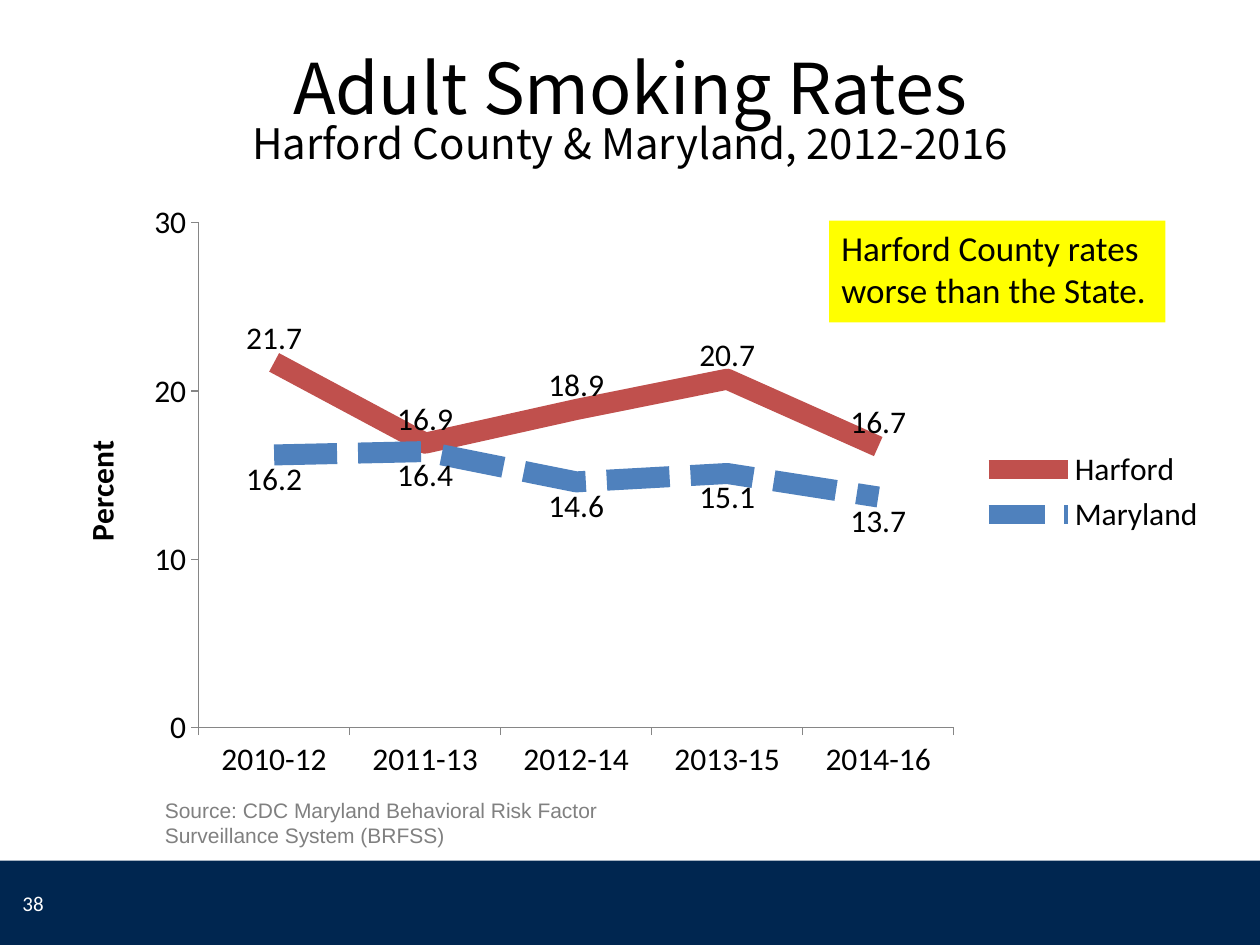
from lxml import etree
from pptx import Presentation
from pptx.chart.data import CategoryChartData
from pptx.dml.color import RGBColor
from pptx.enum.chart import XL_CHART_TYPE, XL_LABEL_POSITION, XL_LEGEND_POSITION, XL_MARKER_STYLE, XL_TICK_MARK
from pptx.enum.dml import MSO_LINE
from pptx.enum.shapes import MSO_SHAPE
from pptx.enum.text import MSO_ANCHOR, PP_ALIGN
from pptx.oxml.ns import qn
from pptx.util import Inches, Pt

LINE_CHART = XL_CHART_TYPE.LINE
ABOVE, BELOW = XL_LABEL_POSITION.ABOVE, XL_LABEL_POSITION.BELOW
SOLID, DASHED = MSO_LINE.SOLID, MSO_LINE.SQUARE_DOT
MIDDLE, TOP = MSO_ANCHOR.MIDDLE, MSO_ANCHOR.TOP


def color(value):
    return RGBColor.from_string(value)


def add_text(text, box, size, font, text_color, anchor=TOP):
    area = slide.shapes.add_textbox(*map(Inches, box))
    frame = area.text_frame
    frame.word_wrap = True
    frame.vertical_anchor = anchor
    paragraph = frame.paragraphs[0]
    paragraph.text = text
    paragraph.font.size = Pt(size)
    paragraph.font.name = font
    paragraph.font.color.rgb = color(text_color)
    return area


prs = Presentation()
prs.slide_width, prs.slide_height = Inches(10), Inches(7.5)
slide = prs.slides.add_slide(prs.slide_layouts[5])

footer_band = slide.shapes.add_shape(MSO_SHAPE.RECTANGLE, Inches(0), Inches(6.83), Inches(10), Inches(0.67))
footer_band.shadow.inherit = False
footer_band.fill.solid()
footer_band.fill.fore_color.rgb = color("002650")
footer_band.line.fill.background()

title = slide.shapes.title
title.left, title.top, title.width, title.height = map(Inches, (0.5, 0.32, 9, 1.17))
title.text_frame.vertical_anchor = MIDDLE
heading = title.text_frame.paragraphs[0]
heading.alignment = PP_ALIGN.CENTER
heading.line_spacing = 0.8
heading.font.name = "Noto Sans CJK SC"
heading.font.color.rgb = color("000000")
main_title = heading.add_run()
main_title.text = "Adult Smoking Rates"
main_title.font.size = Pt(40)
heading.add_line_break()
subtitle = heading.add_run()
subtitle.text = "Harford County & Maryland, 2012-2016"
subtitle.font.size = Pt(24)

add_text("38", (0.08, 6.97, 2.33, 0.4), 12, "Calibri", "FFFFFF", MIDDLE)

rates = CategoryChartData(number_format="0.0")
rates.categories = ["2010-12", "2011-13", "2012-14", "2013-15", "2014-16"]
rates.add_series("Harford", [21.7, 16.9, 18.9, 20.7, 16.7])
rates.add_series("Maryland", [16.2, 16.4, 14.6, 15.1, 13.7])
chart = slide.shapes.add_chart(
    LINE_CHART, Inches(0.42), Inches(1.53), Inches(9.25), Inches(4.75), rates
).chart
chart.has_title = False
chart.font.size = Pt(18)
chart.font.name = "Calibri"
chart.font.color.rgb = color("000000")
chart.has_legend = True
chart.legend.position = XL_LEGEND_POSITION.RIGHT
chart.legend.include_in_layout = False

percent_axis = chart.value_axis
percent_axis.minimum_scale, percent_axis.maximum_scale = 0, 30
percent_axis.major_unit = 10
percent_axis.has_major_gridlines = False
percent_axis.tick_labels.number_format = "0"
percent_axis.tick_labels.number_format_is_linked = False
percent_label = percent_axis.axis_title.text_frame.paragraphs[0]
percent_label.text = "Percent"
percent_label.font.size = Pt(18)
percent_label.font.bold = True
percent_label.font.name = "Calibri"
percent_label.font.color.rgb = color("000000")
for axis in (percent_axis, chart.category_axis):
    axis.major_tick_mark = XL_TICK_MARK.OUTSIDE
    axis.format.line.color.rgb = color("868686")
    axis.format.line.width = Pt(0.75)

series_styles = [("C0504D", SOLID, ABOVE), ("4F81BD", DASHED, BELOW)]
for series, (line_color, dash, position) in zip(chart.plots[0].series, series_styles):
    series.smooth = False
    series.marker.style = XL_MARKER_STYLE.NONE
    series.format.line.color.rgb = color(line_color)
    series.format.line.width = Pt(12)
    series.format.line.dash_style = dash
    labels = series.data_labels
    labels.show_value = True
    labels.position = position
    labels.number_format = "0.0"
    labels.number_format_is_linked = False

plot_area = chart.plots[0]._element.getparent()
for old_layout in plot_area.findall(qn("c:layout")):
    plot_area.remove(old_layout)
layout = etree.Element(qn("c:layout"))
plot_area.insert(0, layout)
manual = etree.SubElement(layout, qn("c:manualLayout"))
for tag, value in [("layoutTarget", "inner"), ("xMode", "edge"), ("yMode", "edge"),
                   ("x", "0.125"), ("y", "0.05"), ("w", "0.648"), ("h", "0.844")]:
    etree.SubElement(manual, qn(f"c:{tag}")).set("val", value)

add_text("Source: CDC Maryland Behavioral Risk Factor Surveillance System (BRFSS)",
         (1.21, 6.28, 3.83, 0.5), 12, "Arial", "808080")
callout = add_text("Harford County rates worse than the State.",
                   (6.58, 1.75, 2.67, 0.81), 20, "Calibri", "000000")
callout.fill.solid()
callout.fill.fore_color.rgb = color("FFFF00")

prs.save("out.pptx")
